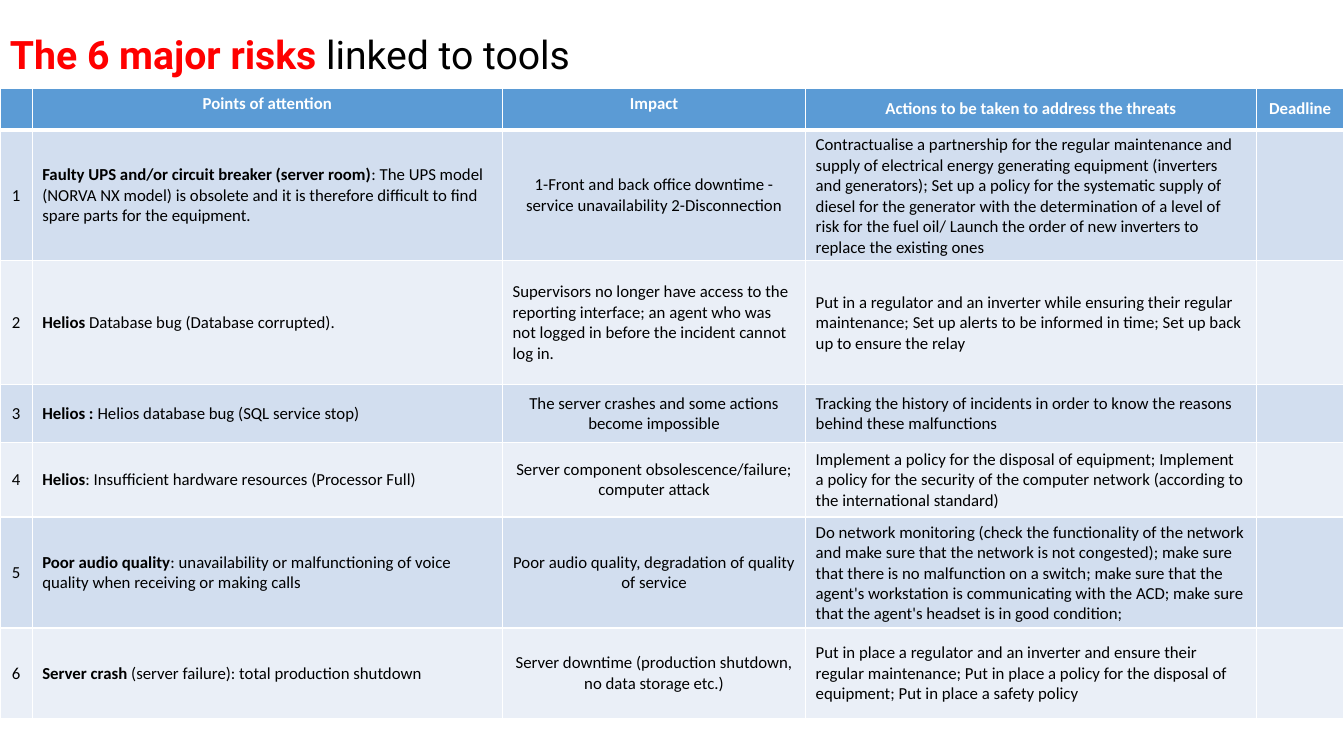
from dataclasses import dataclass

from lxml import etree
from pptx import Presentation
from pptx import util as u
from pptx.dml.color import RGBColor
from pptx.enum import text
from pptx.oxml import ns
from pptx.slide import Slide
from pptx.table import Table, _Cell

RED = RGBColor(0xFF, 0x00, 0x00)
BLACK = RGBColor(0x00, 0x00, 0x00)
WHITE = RGBColor(0xFF, 0xFF, 0xFF)
HEADER_BLUE = RGBColor(0x5B, 0x9B, 0xD5)
BANDS = (RGBColor(0xD2, 0xDE, 0xEF), RGBColor(0xEA, 0xEF, 0xF7))

CENTER = text.PP_ALIGN.CENTER
LEFT = text.PP_ALIGN.LEFT
TOP = text.MSO_ANCHOR.TOP
MIDDLE = text.MSO_ANCHOR.MIDDLE

COLUMN_WIDTHS = (23, 336, 216.5, 322, 62.5)
HEADER_HEIGHT = 29.5
HEADERS = (
    ("", TOP),
    ("Points of attention", TOP),
    ("Impact", TOP),
    ("Actions to be taken to address the threats", MIDDLE),
    ("Deadline", MIDDLE),
)


@dataclass(frozen=True)
class Risk:
    height: float
    subject: str
    detail: str
    impact: str
    actions: str
    impact_alignment: text.PP_ALIGN = CENTER


RISKS = (
    Risk(
        88.5,
        "Faulty UPS and/or circuit breaker (server room)",
        ": The UPS model (NORVA NX model) is obsolete and it is therefore difficult "
        "to find spare parts for the equipment.",
        "1-Front and back office downtime - service unavailability 2-Disconnection",
        "Contractualise a partnership for the regular maintenance and supply of "
        "electrical energy generating equipment (inverters and generators); Set up a "
        "policy for the systematic supply of diesel for the generator with the "
        "determination of a level of risk for the fuel oil/ Launch the order of new "
        "inverters to replace the existing ones",
    ),
    Risk(
        88.5,
        "Helios ",
        "Database bug (Database corrupted).",
        "Supervisors no longer have access to the reporting interface; an agent who "
        "was not logged in before the incident cannot log in.",
        "Put in a regulator and an inverter while ensuring their regular maintenance; "
        "Set up alerts to be informed in time; Set up back up to ensure the relay",
        LEFT,
    ),
    Risk(
        41.5,
        "Helios : ",
        "Helios database bug (SQL service stop)",
        "The server crashes and some actions become impossible",
        "Tracking the history of incidents in order to know the reasons behind these "
        "malfunctions",
    ),
    Risk(
        53,
        "Helios",
        ": Insufficient hardware resources (Processor Full)",
        "Server component obsolescence/failure; computer attack",
        "Implement a policy for the disposal of equipment; Implement a policy for the "
        "security of the computer network (according to the international standard)",
    ),
    Risk(
        68.5,
        "Poor audio quality",
        ": unavailability or malfunctioning of voice quality when receiving or making "
        "calls",
        "Poor audio quality, degradation of quality of service",
        "Do network monitoring (check the functionality of the network and make sure "
        "that the network is not congested); make sure that there is no malfunction on "
        "a switch; make sure that the agent's workstation is communicating with the "
        "ACD; make sure that the agent's headset is in good condition;",
    ),
    Risk(
        65,
        "Server crash ",
        "(server failure): total production shutdown",
        "Server downtime (production shutdown, no data storage etc.)",
        "Put in place a regulator and an inverter and ensure their regular maintenance; "
        "Put in place a policy for the disposal of equipment; Put in place a safety "
        "policy",
    ),
)


def style_cell(cell: _Cell, fill: RGBColor, top: float = 1, bottom: float = 1) -> None:
    properties = cell._tc.get_or_add_tcPr()
    for side, width in (("L", 1), ("R", 1), ("T", top), ("B", bottom)):
        line = etree.SubElement(properties, ns.qn(f"a:ln{side}"), w=str(u.Pt(width)))
        line_fill = etree.SubElement(line, ns.qn("a:solidFill"))
        etree.SubElement(line_fill, ns.qn("a:srgbClr"), val=str(WHITE))
    cell.fill.solid()
    cell.fill.fore_color.rgb = fill


def write_cell(
    cell: _Cell,
    content: str,
    alignment: text.PP_ALIGN = LEFT,
    color: RGBColor = BLACK,
    bold: bool = False,
    anchor: text.MSO_ANCHOR = MIDDLE,
    lead: str = "",
) -> None:
    cell.vertical_anchor = anchor
    paragraph = cell.text_frame.paragraphs[0]
    paragraph.alignment = alignment
    paragraph.font.name = "Calibri"
    paragraph.font.size = u.Pt(12)
    paragraph.font.color.rgb = color
    if lead:
        run = paragraph.add_run()
        run.text = lead
        run.font.bold = True
    if content:
        run = paragraph.add_run()
        run.text = content
        run.font.bold = bold


def add_title(slide: Slide) -> None:
    box = slide.shapes.add_textbox(u.Pt(0), u.Pt(18), u.Pt(769), u.Pt(41))
    box.text_frame.word_wrap = True
    paragraph = box.text_frame.paragraphs[0]
    paragraph.font.name = "Roboto"
    paragraph.font.size = u.Pt(28)
    for content, color, bold in (
        ("The 6 major risks ", RED, True),
        ("linked to tools", BLACK, False),
    ):
        run = paragraph.add_run()
        run.text = content
        run.font.color.rgb = color
        run.font.bold = bold


def fill_header(table: Table) -> None:
    table.rows[0].height = u.Pt(HEADER_HEIGHT)
    for cell, (content, anchor) in zip(table.rows[0].cells, HEADERS):
        style_cell(cell, HEADER_BLUE, bottom=3)
        write_cell(cell, content, CENTER, WHITE, True, anchor)


def fill_risk(table: Table, number: int, risk: Risk) -> None:
    row = table.rows[number]
    row.height = u.Pt(risk.height)
    for cell in row.cells:
        style_cell(cell, BANDS[(number - 1) % 2], top=3 if number == 1 else 1)
    index, points, impact, actions, deadline = row.cells
    write_cell(index, str(number), CENTER)
    write_cell(points, risk.detail, lead=risk.subject)
    write_cell(impact, risk.impact, risk.impact_alignment)
    write_cell(actions, risk.actions)
    write_cell(deadline, "")


def add_risk_table(slide: Slide) -> None:
    height = HEADER_HEIGHT + sum(risk.height for risk in RISKS)
    frame = slide.shapes.add_table(
        len(RISKS) + 1, len(COLUMN_WIDTHS),
        u.Pt(0), u.Pt(63.25), u.Pt(sum(COLUMN_WIDTHS)), u.Pt(height),
    )
    table = frame.table
    table.horz_banding = False
    for column, width in zip(table.columns, COLUMN_WIDTHS):
        column.width = u.Pt(width)
    fill_header(table)
    for number, risk in enumerate(RISKS, start=1):
        fill_risk(table, number, risk)


def main() -> None:
    presentation = Presentation()
    presentation.slide_width = u.Pt(960)
    presentation.slide_height = u.Pt(540)
    slide = presentation.slides.add_slide(presentation.slide_layouts[6])
    add_title(slide)
    add_risk_table(slide)
    presentation.save("out.pptx")


if __name__ == "__main__":
    main()
